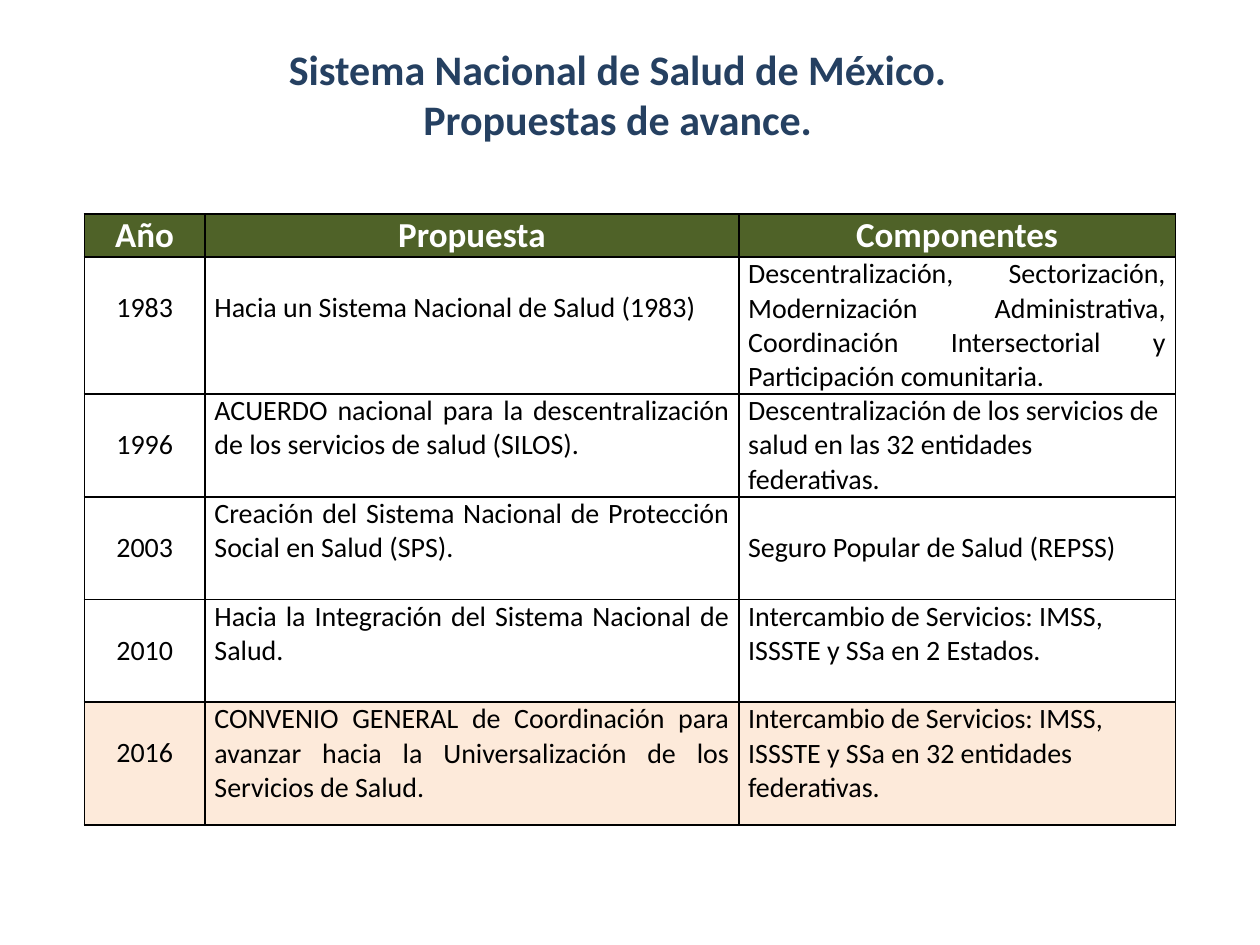
import pptx
import pptx.dml.color
import pptx.enum.text
import pptx.oxml
import pptx.oxml.ns
import pptx.util

Pt = pptx.util.Pt
ALIGN = pptx.enum.text.PP_ALIGN
ANCHOR = pptx.enum.text.MSO_ANCHOR
FONT = "Calibri"
BODY_LINE = 19.5
COLORS = {
    "title": "254061",
    "header": "4F6228",
    "header_text": "FFFFFF",
    "body": "FFFFFF",
    "body_text": "000000",
    "latest": "FDEADA",
    "border": "000000",
}
TITLE_LINES = ["Sistema Nacional de Salud de México.", "Propuestas de avance."]
HEADINGS = ["Año", "Propuesta", "Componentes"]
COLUMN_WIDTHS = [69, 305, 249.5]
HEADER_HEIGHT = 24.5
PROPOSALS = [
    ("1983", "Hacia un Sistema Nacional de Salud (1983)",
     "Descentralización, Sectorización, Modernización Administrativa, "
     "Coordinación Intersectorial y Participación comunitaria.", 78),
    ("1996", "ACUERDO nacional para la descentralización de los servicios de salud (SILOS).",
     "Descentralización de los servicios de salud en las 32 entidades federativas.", 58.7),
    ("2003", "Creación del Sistema Nacional de Protección Social en Salud (SPS).",
     "Seguro Popular de Salud (REPSS)", 58.7),
    ("2010", "Hacia la Integración del Sistema Nacional de Salud.",
     "Intercambio de Servicios: IMSS, ISSSTE y SSa en 2 Estados.", 58.7),
    ("2016", "CONVENIO GENERAL de Coordinación para avanzar hacia la Universalización "
     "de los Servicios de Salud.",
     "Intercambio de Servicios: IMSS, ISSSTE y SSa en 32 entidades federativas.", 70.3),
]
SECOND_LINE_TEXTS = {PROPOSALS[0][1], PROPOSALS[2][2]}


def rgb(color):
    return pptx.dml.color.RGBColor.from_string(COLORS[color])


def add_text(paragraph, text, size, color, bold, align):
    paragraph.alignment = align
    run = paragraph.add_run()
    run.text = text
    run.font.name = FONT
    run.font.size = Pt(size)
    run.font.bold = bold
    run.font.color.rgb = rgb(color)


def add_title(slide):
    title = slide.shapes.title
    title.left, title.top, title.width, title.height = Pt(156), Pt(21), Pt(394), Pt(65.5)
    frame = title.text_frame
    frame.word_wrap = False
    frame.auto_size = pptx.enum.text.MSO_AUTO_SIZE.NONE
    frame.vertical_anchor = ANCHOR.TOP
    for index, line in enumerate(TITLE_LINES):
        paragraph = frame.add_paragraph() if index else frame.paragraphs[0]
        add_text(paragraph, line, 24, "title", True, ALIGN.CENTER)


def add_borders(cell):
    properties = cell._tc.get_or_add_tcPr()
    for position, side in enumerate(("lnL", "lnR", "lnT", "lnB")):
        border = pptx.oxml.parse_xml(
            f'<a:{side} {pptx.oxml.ns.nsdecls("a")} w="{Pt(1)}"><a:solidFill>'
            f'<a:srgbClr val="{COLORS["border"]}"/></a:solidFill></a:{side}>')
        properties.insert(position, border)


def fill_cell(cell, text, size, fill, color, bold, align, top=0):
    cell.margin_left = cell.margin_right = Pt(5.4)
    cell.margin_top, cell.margin_bottom = Pt(top), Pt(0)
    cell.vertical_anchor = ANCHOR.TOP
    cell.fill.solid()
    cell.fill.fore_color.rgb = rgb(fill)
    add_borders(cell)
    add_text(cell.text_frame.paragraphs[0], text, size, color, bold, align)


def body_align(row, column):
    if column == 0:
        return ALIGN.CENTER
    justified_column = 2 if row == 0 else 1
    return ALIGN.JUSTIFY if column == justified_column else ALIGN.LEFT


def add_proposals(slide):
    heights = [HEADER_HEIGHT] + [proposal[-1] for proposal in PROPOSALS]
    table = slide.shapes.add_table(
        len(heights), len(HEADINGS), Pt(48.2), Pt(122.4),
        Pt(sum(COLUMN_WIDTHS)), Pt(sum(heights))).table
    table.horz_banding = False
    for column, width in zip(table.columns, COLUMN_WIDTHS):
        column.width = Pt(width)
    for row, height in zip(table.rows, heights):
        row.height = Pt(height)
    for column, heading in enumerate(HEADINGS):
        fill_cell(table.cell(0, column), heading, 20, "header", "header_text", True, ALIGN.CENTER)
    for row, (*texts, _) in enumerate(PROPOSALS):
        fill = "latest" if row == len(PROPOSALS) - 1 else "body"
        for column, text in enumerate(texts):
            lowered = column == 0 or text in SECOND_LINE_TEXTS
            fill_cell(table.cell(row + 1, column), text, 16, fill, "body_text", False,
                      body_align(row, column), BODY_LINE if lowered else 0)


def main():
    presentation = pptx.Presentation()
    presentation.slide_width, presentation.slide_height = Pt(720), Pt(540)
    slide = presentation.slides.add_slide(presentation.slide_layouts[5])
    add_proposals(slide)
    add_title(slide)
    presentation.save("out.pptx")


if __name__ == "__main__":
    main()
